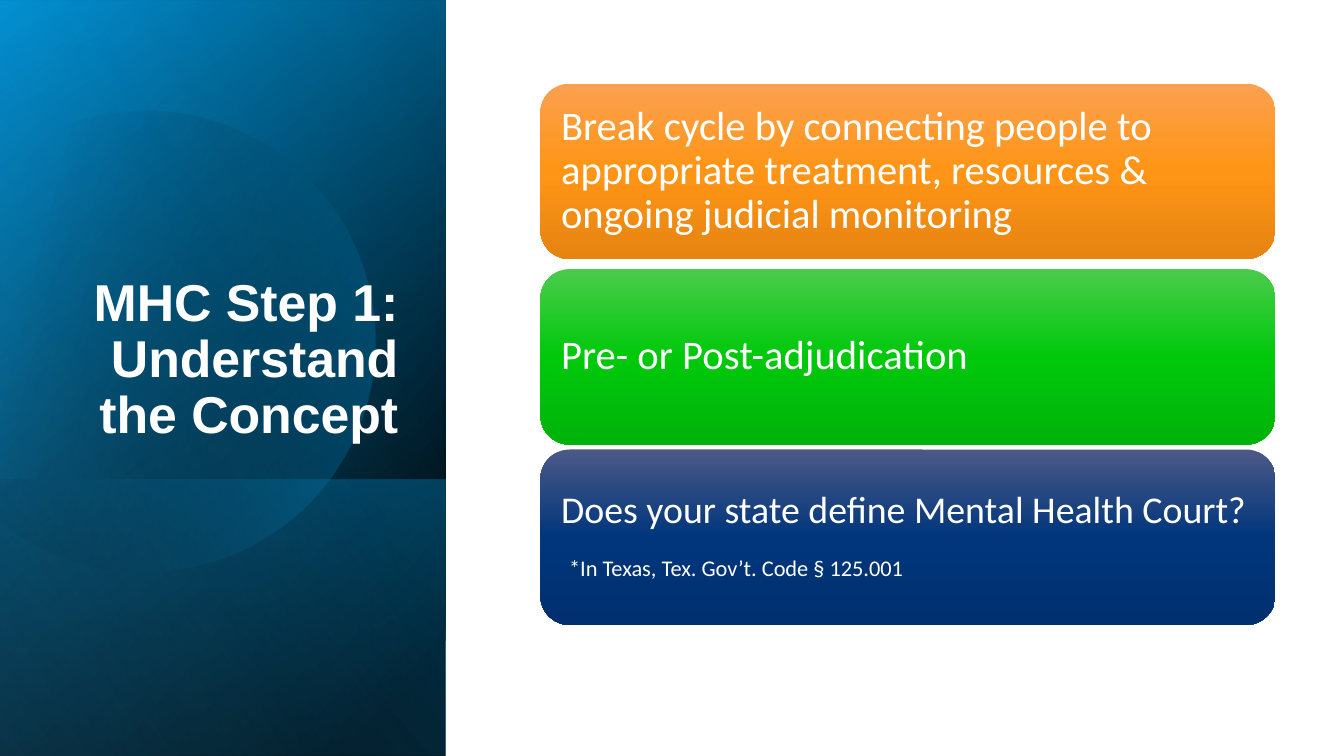
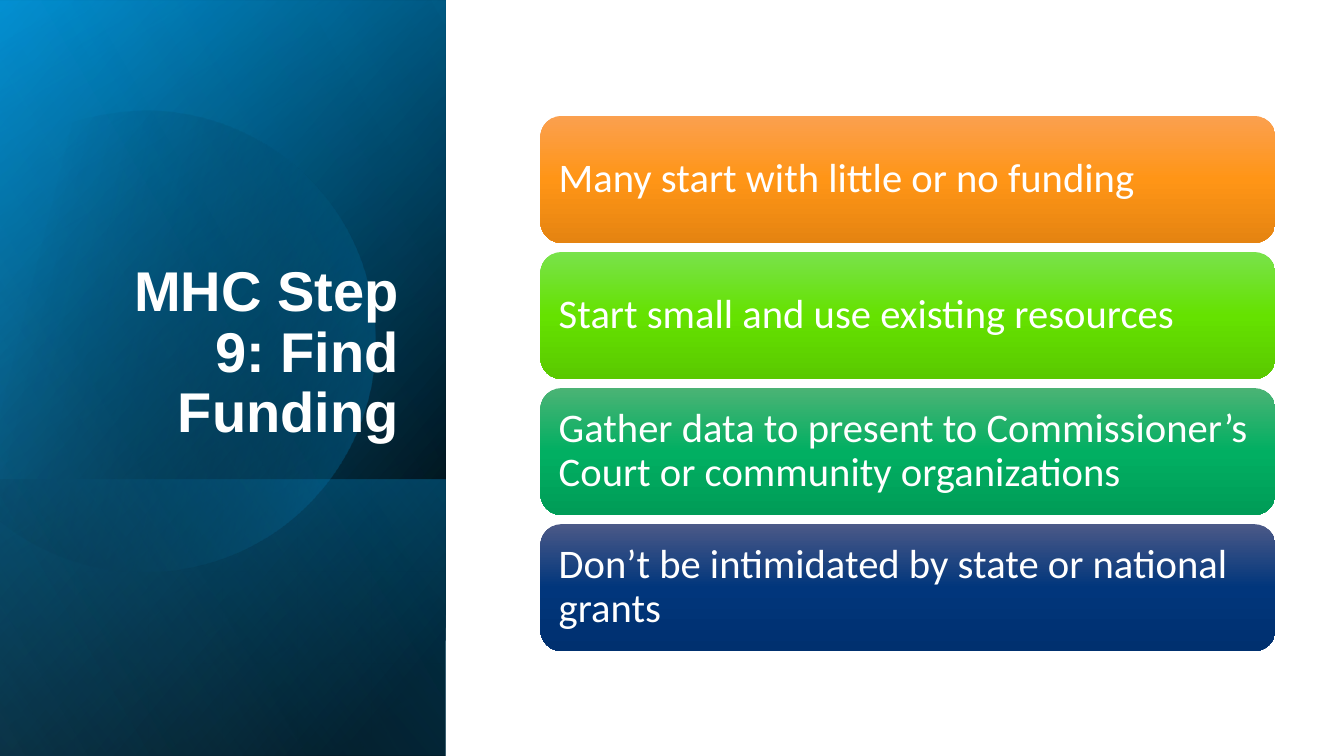
from math import cos, radians, sin

from lxml import etree
from pptx import Presentation
from pptx.dml.color import RGBColor
from pptx.enum.shapes import MSO_SHAPE
from pptx.enum.text import MSO_ANCHOR, PP_ALIGN
from pptx.oxml import parse_xml
from pptx.oxml.ns import nsdecls, qn
from pptx.util import Inches, Pt

WHITE = "FFFFFF"
ORANGE = ("FBA04F", "FF9516", "E58411")
GREEN = ("4BCB4C", "00C90B", "00B30A")
LIME = ("79E24B", "65E200", "5AC900")
EMERALD = ("4BB375", "01AF62", "009C57")
NAVY = ("4B5987", "01367C", "00306F")

PANEL_LAYERS = [
    ((-1.54, 1.54, 7.5, 4.42), [(8, "000000", 100), (100, "007FBA", 100)], 50),
    ((-1.54, 1.55, 7.5, 4.42), [(0, "000000", 0), (99, "00A9F8", 46)], 30),
    ((0.84, 3.92, 2.74, 4.42), [(2, "00A9F8", 29), (100, "000000", 30)], 130),
    ((-1.54, 1.54, 7.5, 4.42), [(0, "000000", 0), (99, "62CDFF", 11)], 120),
]
DISC_LAYER = 3
DISC_BOX = (-0.55, 1.06, 4.27, 4.57)
DISC_ROTATION = 343.9
DISC_SEGMENTS = [
    [(1.49, 1.1)],
    [(2.46, 1.12), (3.35, 1.77), (3.63, 2.75)],
    [(3.98, 3.97), (3.28, 5.23), (2.07, 5.58)],
    [(1.31, 5.8), (0.53, 5.61), (-0.03, 5.14)],
    [(-0.15, 5.03)],
    [(-0.15, 1.75)],
    [(0, 1.61)],
    [(0.23, 1.42), (0.5, 1.28), (0.8, 1.19)],
    [(1.03, 1.13), (1.26, 1.1), (1.49, 1.1)],
]

SLIDES = [
    ("MHC Step 1: Understand the Concept", 37, 1.74, [
        (0.83, ORANGE, 29, "Break cycle by connecting people to appropriate treatment, "
                           "resources & ongoing judicial monitoring", None),
        (2.67, GREEN, 29, "Pre- or Post-adjudication", None),
        (4.46, NAVY, 27, "Does your state define Mental Health Court?",
         "*In Texas, Tex. Gov’t. Code § 125.001"),
    ]),
    ("MHC Step 9: Find Funding", 40, 1.26, [
        (1.15, ORANGE, 29, "Many start with little or no funding", None),
        (2.5, LIME, 29, "Start small and use existing resources", None),
        (3.85, EMERALD, 29, "Gather data to present to Commissioner’s Court "
                            "or community organizations", None),
        (5.2, NAVY, 29, "Don’t be intimidated by state or national grants", None),
    ]),
]


def fill_gradient(shape, stops, angle):
    shape.shadow.inherit = False
    shape.line.fill.background()
    shape.fill.background()
    gradient = parse_xml(f'<a:gradFill {nsdecls("a")} rotWithShape="1"><a:gsLst/></a:gradFill>')
    for position, colour, opacity in stops:
        stop = etree.SubElement(gradient[0], qn("a:gs"), pos=str(position * 1000))
        tint = etree.SubElement(stop, qn("a:srgbClr"), val=colour)
        if opacity < 100:
            etree.SubElement(tint, qn("a:alpha"), val=str(opacity * 1000))
    etree.SubElement(gradient, qn("a:lin"), ang=str(angle * 60000), scaled="0")
    properties = shape._element.spPr
    properties.replace(properties.find(qn("a:noFill")), gradient)


def style_text(para, font, size, bold=False):
    para.line_spacing = 0.9
    for span in para.runs:
        span.font.name = font
        span.font.size = Pt(size)
        span.font.bold = bold
        span.font.color.rgb = RGBColor.from_string(WHITE)


left, top, width, height = DISC_BOX
turn = radians(-DISC_ROTATION)
disc_segments = []
for segment in DISC_SEGMENTS:
    points = []
    for x, y in segment:
        across, down = x - left - width / 2, y - top - height / 2
        points.append((Inches(width / 2 + across * cos(turn) - down * sin(turn)),
                       Inches(height / 2 + across * sin(turn) + down * cos(turn))))
    disc_segments.append(points)

deck = Presentation()
deck.slide_width = Inches(13.33)
deck.slide_height = Inches(7.5)

for title, title_size, bar_height, bars in SLIDES:
    page = deck.slides.add_slide(deck.slide_layouts[6])

    backdrop = page.shapes.add_shape(MSO_SHAPE.RECTANGLE, 0, 0, deck.slide_width, deck.slide_height)
    backdrop.shadow.inherit = False
    backdrop.fill.solid()
    backdrop.fill.fore_color.rgb = RGBColor.from_string(WHITE)
    backdrop.line.fill.background()

    for index, (bounds, stops, angle) in enumerate(PANEL_LAYERS):
        if index == DISC_LAYER:
            builder = page.shapes.build_freeform(*disc_segments[0][0])
            builder.add_line_segments([points[-1] for points in disc_segments[1:]], close=True)
            disc = builder.convert_to_shape()
            disc.left, disc.top, disc.width, disc.height = [Inches(value) for value in DISC_BOX]
            disc.rotation = DISC_ROTATION
            outline = disc._element.spPr.find(".//" + qn("a:path"))
            outline.set("w", str(disc.width))
            outline.set("h", str(disc.height))
            for command, points in zip(list(outline), disc_segments):
                curve = etree.Element(qn("a:cubicBezTo")) if len(points) == 3 else command
                for child in list(curve):
                    curve.remove(child)
                for x, y in points:
                    etree.SubElement(curve, qn("a:pt"), x=str(x), y=str(y))
                if curve is not command:
                    outline.replace(command, curve)
            fill_gradient(disc, [(29, "000000", 0), (100, "00A9F8", 43)], 30)
        panel = page.shapes.add_shape(MSO_SHAPE.RECTANGLE, *[Inches(value) for value in bounds])
        panel.rotation = 90
        panel._element.spPr.xfrm.set("flipH", "1")
        fill_gradient(panel, stops, angle)

    box = page.shapes.add_textbox(Inches(0.64), Inches(1.84), Inches(3.41), Inches(2.62))
    frame = box.text_frame
    frame.word_wrap = True
    frame.vertical_anchor = MSO_ANCHOR.BOTTOM
    frame.text = title
    frame.paragraphs[0].alignment = PP_ALIGN.RIGHT
    style_text(frame.paragraphs[0], "Arial", title_size, bold=True)

    for bar_top, colours, size, text, note in bars:
        bar = page.shapes.add_shape(MSO_SHAPE.ROUNDED_RECTANGLE, Inches(5.36), Inches(bar_top),
                                    Inches(7.29), Inches(bar_height))
        fill_gradient(bar, [(50 * i, colour, 100) for i, colour in enumerate(colours)], 90)
        frame = bar.text_frame
        frame.word_wrap = True
        frame.vertical_anchor = MSO_ANCHOR.MIDDLE
        frame.margin_left = frame.margin_right = Inches(0.12)
        frame.margin_top = frame.margin_bottom = Inches(0.12)
        frame.text = text
        para = frame.paragraphs[0]
        para.alignment = PP_ALIGN.LEFT
        style_text(para, "Calibri", size)
        if note:
            frame.margin_bottom = Inches(0.14)
            para.space_after = Pt(18.5)
            para = frame.add_paragraph()
            para.text = note
            para.alignment = PP_ALIGN.LEFT
            para._p.get_or_add_pPr().set("marL", str(Inches(0.08)))
            style_text(para, "Calibri", 16)

deck.save("out.pptx")
